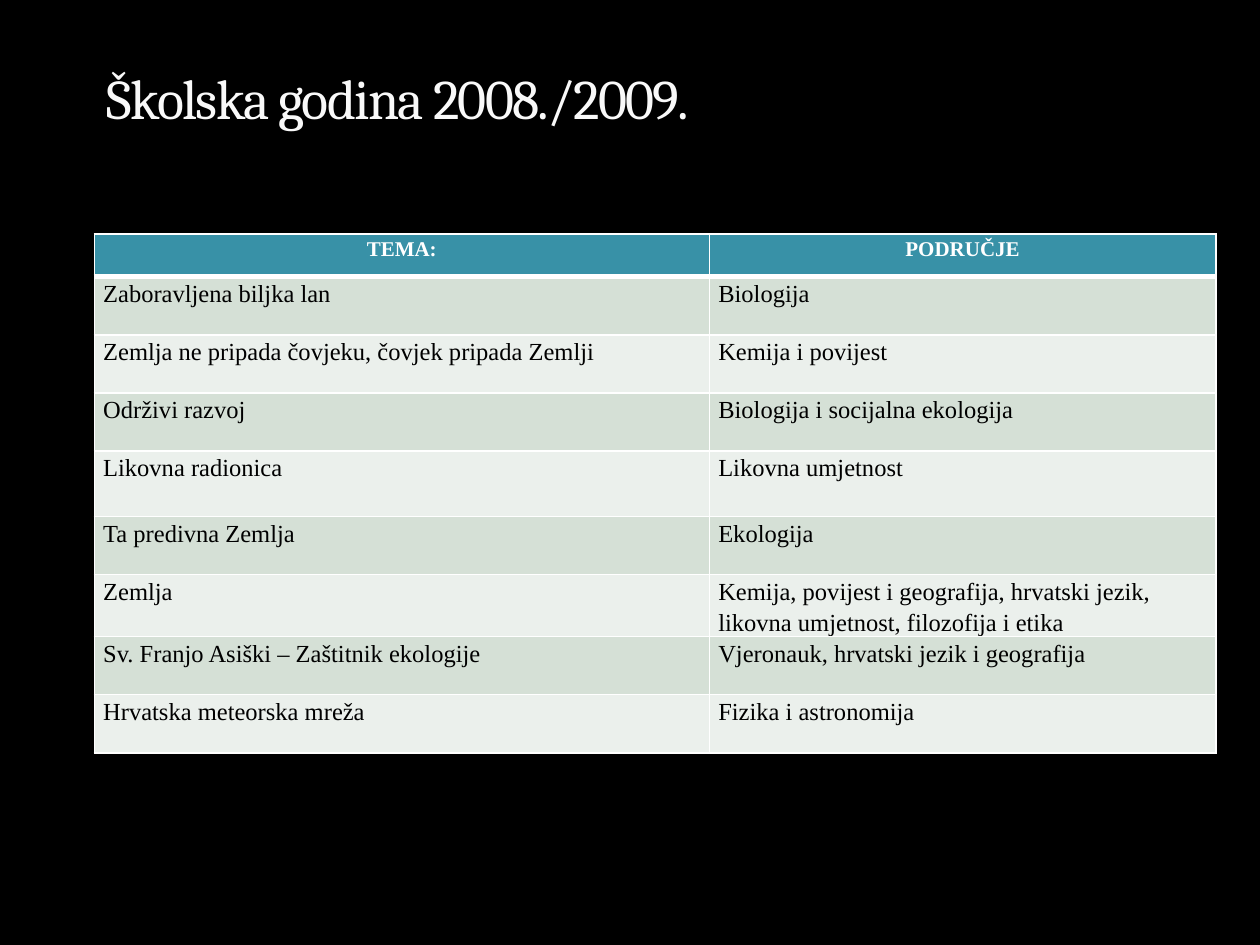
import pptx
import pptx.util
import pptx.dml.color
import pptx.enum.text
import pptx.oxml.ns
import lxml.etree

Cm, Pt = pptx.util.Cm, pptx.util.Pt
RGBColor = pptx.dml.color.RGBColor
Align = pptx.enum.text.PP_ALIGN

BLACK = RGBColor(0x00, 0x00, 0x00)
WHITE = RGBColor(0xFF, 0xFF, 0xFF)
PALE = RGBColor(0xF9, 0xF9, 0xF9)
TEAL = RGBColor(0x38, 0x91, 0xA7)
SAGE = RGBColor(0xD5, 0xE0, 0xD6)
MIST = RGBColor(0xEB, 0xF0, 0xEC)

ROWS = [
    ("TEMA:", "PODRUČJE"),
    ("Zaboravljena biljka lan", "Biologija"),
    ("Zemlja ne pripada čovjeku, čovjek pripada Zemlji", "Kemija i povijest"),
    ("Održivi razvoj", "Biologija i socijalna ekologija"),
    ("Likovna radionica", "Likovna umjetnost"),
    ("Ta predivna Zemlja", "Ekologija"),
    ("Zemlja", "Kemija, povijest i geografija, hrvatski jezik, "
               "likovna umjetnost, filozofija i etika"),
    ("Sv. Franjo Asiški – Zaštitnik ekologije",
     "Vjeronauk, hrvatski jezik i geografija"),
    ("Hrvatska meteorska mreža", "Fizika i astronomija"),
]
WIDTHS = [12.4, 10.21]
HEIGHTS = [0.86] + [1.17] * 3 + [1.32] + [1.17] * 4


def border(cell, side, width):
    qn = pptx.oxml.ns.qn
    line = lxml.etree.SubElement(cell._tc.get_or_add_tcPr(), qn("a:ln" + side),
                                 w=str(Pt(width)))
    fill = lxml.etree.SubElement(line, qn("a:solidFill"))
    lxml.etree.SubElement(fill, qn("a:srgbClr"), val=str(WHITE))


def write(par, text, font, size, color, bold=False):
    run = par.add_run()
    run.text = text
    run.font.name = font
    run.font.size = Pt(size)
    run.font.color.rgb = color
    run.font.bold = bold
    return run


deck = pptx.Presentation()
deck.slide_width, deck.slide_height = Cm(25.4), Cm(19.05)
slide = deck.slides.add_slide(deck.slide_layouts[5])
slide.background.fill.solid()
slide.background.fill.fore_color.rgb = BLACK

# Title
title = slide.shapes.title
title.left, title.top = Cm(1.9), Cm(0.91)
title.width, title.height = Cm(21.59), Cm(1.85)
frame = title.text_frame
frame.auto_size = pptx.enum.text.MSO_AUTO_SIZE.NONE
frame.vertical_anchor = pptx.enum.text.MSO_ANCHOR.BOTTOM
par = frame.paragraphs[0]
par.alignment = Align.LEFT
run = write(par, "Školska godina 2008./2009.", "Cambria", 32, PALE)
run.font._element.set("spc", "-100")

# Table of topics and subject areas
table = slide.shapes.add_table(len(ROWS), len(WIDTHS), Cm(1.9), Cm(4.72),
                               Cm(sum(WIDTHS)), Cm(sum(HEIGHTS))).table
for col, width in zip(table.columns, WIDTHS):
    col.width = Cm(width)

for r, (texts, height) in enumerate(zip(ROWS, HEIGHTS)):
    table.rows[r].height = Cm(height)
    head = r == 0
    for c, text in enumerate(texts):
        cell = table.cell(r, c)
        cell.margin_left = cell.margin_right = Cm(0.18)
        cell.margin_top = cell.margin_bottom = 0
        for side in "LRTB":
            thick = (r, side) in [(0, "B"), (1, "T")]
            border(cell, side, 3 if thick else 1)
        cell.fill.solid()
        cell.fill.fore_color.rgb = TEAL if head else SAGE if r % 2 else MIST
        par = cell.text_frame.paragraphs[0]
        par.alignment = Align.CENTER if head else Align.LEFT
        par.line_spacing = 1.15
        par.space_after = Pt(0 if head else 10)
        write(par, text, "Times New Roman", 12 if head else 14,
              WHITE if head else BLACK, head)

deck.save("out.pptx")
